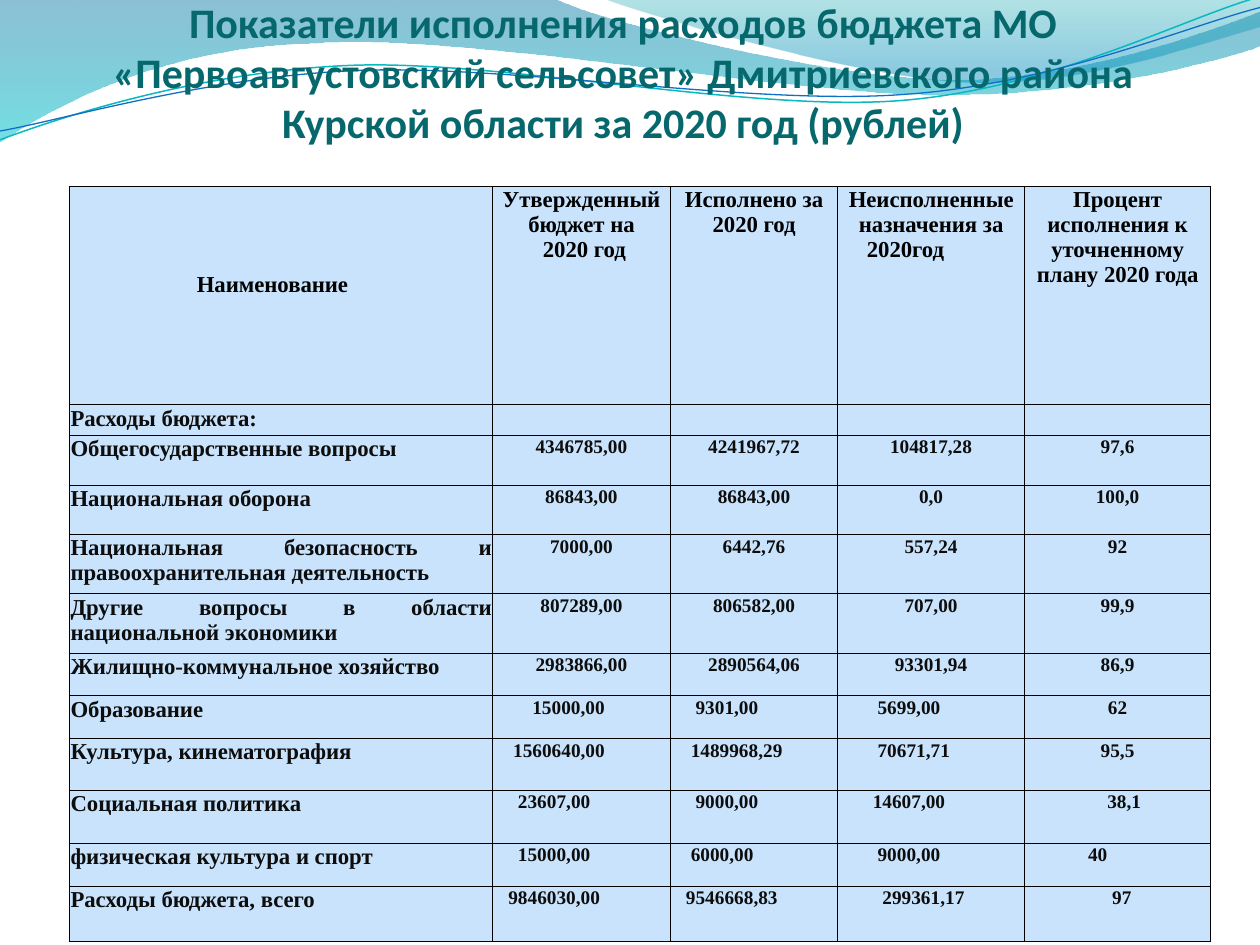
from lxml.etree import SubElement
from pptx import Presentation
from pptx.dml.color import RGBColor
from pptx.enum.text import MSO_ANCHOR as Anchor, MSO_AUTO_SIZE as AutoSize, PP_ALIGN as Align
from pptx.oxml.ns import qn
from pptx.util import Inches, Pt

COLORS = {"title": "06686C", "cell": "C8E3FB", "border": "000000", "head": "000000",
          "body": "0D0D0D", "page": "FFFFFF", "teal_line": "0AB8BF", "blue_line": "0F6FC6",
          "sea": "0074A1", "aqua": "00C6CF", "teal": "00A1A9", "sky": "008BBF"}
HEAD_SPACE, BODY_SPACE = Pt(3.25), Pt(2.75)  # indent units: a quarter of the font size
GRID = 1000  # outline units to the inch

TITLE = ("Показатели исполнения расходов бюджета МО «Первоавгустовский сельсовет» "
         "Дмитриевского района Курской области за 2020 год (рублей)")
COLUMNS = [3.36, 1.41, 1.33, 1.48, 1.48]
HEAD_ROWS = [0.46, 0.21, 0.26, 0.79]
HEADINGS = [["Утвержденный бюджет на", "2020 год"], ["Исполнено за 2020 год"],
            ["Неисполненные назначения за", "2020год"],
            ["Процент исполнения к уточненному плану 2020 года"]]

# Row height, name, four values; a pair is (value, left indent) in a left-aligned cell
EXPENSES = [
    (0.24, "Расходы бюджета:", "", "", "", ""),
    (0.40, "Общегосударственные вопросы", "4346785,00", "4241967,72", "104817,28", "97,6"),
    (0.39, "Национальная оборона", "86843,00", "86843,00", "0,0", "100,0"),
    (0.47, "Национальная безопасность и правоохранительная деятельность",
     "7000,00", "6442,76", "557,24", "92"),
    (0.47, "Другие вопросы в области национальной экономики",
     "807289,00", "806582,00", "707,00", "99,9"),
    (0.34, "Жилищно-коммунальное хозяйство", "2983866,00", "2890564,06", "93301,94", "86,9"),
    (0.34, "Образование", ("15000,00", 8), ("9301,00", 5), ("5699,00", 8), "62"),
    (0.41, "Культура, кинематография",
     ("1560640,00", 4), ("1489968,29", 4), ("70671,71", 8), "95,5"),
    (0.42, "Социальная политика", ("23607,00", 5), ("9000,00", 5), ("14607,00", 7), ("38,1", 17)),
    (0.34, "физическая культура и спорт",
     ("15000,00", 5), ("6000,00", 4), ("9000,00", 8), ("40", 13)),
    (0.44, "Расходы бюджета, всего",
     ("9846030,00", 3), ("9546668,83", 3), ("299361,17", 9), ("97", 18)),
]

# Wave outlines: a point is a line end, a triple of points is a Bezier curve
BANDS = [
    ([(0, 0), (4.4, -0.01), ((4.76, 0.17), (6.64, 0.63), (7.58, 0.63)),
      ((8.53, 0.63), (9.58, 0.26), (10, 0.09)), (10.01, 0.36),
      ((9.83, 0.44), (8.7, 0.76), (7.46, 0.75)), ((6.22, 0.75), (3.82, 0.28), (2.57, 0.34)),
      ((1.29, 0.36), (0.46, 0.83), (-0.01, 1.13))],
     [(0, "sea", 45), (1, "aqua", 55)]),
    ([(4.79, -0.01), ((5.09, 0.11), (6.82, 0.62), (7.69, 0.65)),
      ((8.56, 0.69), (9.61, 0.32), (10, 0.21)), (10, 0)],
     [(0, "teal", 30), (0.8, "sky", 45)]),
]
STRANDS = [
    ([(0, 1.11), ((0.48, 0.93), (1.58, 0.57), (2.77, 0.52)),
      ((3.95, 0.47), (5.93, 0.89), (7.13, 0.8)), ((8.33, 0.71), (9.38, 0.15), (9.98, -0.02))],
     "teal_line", 0.85),
    ([(0, 1.04), ((0.47, 0.96), (1.64, 0.61), (2.83, 0.56)),
      ((4.03, 0.51), (5.97, 0.84), (7.17, 0.75)), ((8.36, 0.67), (9.41, 0.21), (10, 0.06))],
     "blue_line", 0.75),
]


def rgb(name):
    return RGBColor.from_string(COLORS[name])


def draw_wave(slide, outline, closed):
    parts = [part if isinstance(part[0], tuple) else (part,) for part in outline]
    start, *rest = [(round(x * GRID), round(y * GRID)) for part in parts for x, y in part]
    builder = slide.shapes.build_freeform(*start, scale=Inches(1) / GRID)
    builder.add_line_segments(rest, close=closed)
    wave = builder.convert_to_shape()
    wave.shadow.inherit = False

    # Turn each run of three segments that belongs to a curve into one Bezier
    segments = iter(list(wave.element.iter(qn("a:lnTo"))))
    for part in parts[1:]:
        members = [next(segments) for _ in part]
        if len(part) == 3:
            curve = members[0].makeelement(qn("a:cubicBezTo"))
            members[0].addprevious(curve)
            for member in members:
                curve.append(member[0])
                member.getparent().remove(member)
    return wave


def add_waves(slide):
    for outline, stops in BANDS:
        band = draw_wave(slide, outline, True)
        band.line.fill.background()
        band.fill.gradient()
        band.fill.gradient_angle = 270
        for stop, (position, color, _) in zip(band.fill.gradient_stops, stops):
            stop.position = position
            stop.color.rgb = rgb(color)
        tints = list(band.element.spPr.iter(qn("a:srgbClr")))
        for tint, (_, _, opacity) in zip(tints, stops):
            SubElement(tint, qn("a:alpha"), val=str(opacity * 1000))
    for outline, color, width in STRANDS:
        strand = draw_wave(slide, outline, False)
        strand.fill.background()
        strand.line.color.rgb = rgb(color)
        strand.line.width = Pt(width)


def add_title(slide, left, top, width, height):
    title = slide.shapes.title
    title.element.getparent().append(title.element)  # in front of the waves
    title.left, title.top, title.width, title.height = map(Inches, (left, top, width, height))
    frame = title.text_frame
    frame.text = TITLE
    frame.auto_size = AutoSize.NONE
    frame.word_wrap = True
    frame.vertical_anchor = Anchor.BOTTOM
    frame.margin_left = frame.margin_right = frame.margin_bottom = 0
    frame.margin_top = Inches(0.05)
    heading = frame.paragraphs[0]
    heading.alignment = Align.CENTER
    style_font(heading, 24, "title", "Calibri")


def style_font(paragraph, size, color, face="Times New Roman"):
    font = paragraph.font
    font.name, font.size, font.bold = face, Pt(size), True
    font.color.rgb = rgb(color)


def indent_line(cell, side, length):
    last_line = cell.text_frame.paragraphs[-1]
    last_line._p.get_or_add_pPr().set(side, str(length))


def format_cell(cell, lines, size, color, align, edges="LRTB"):
    cell.margin_left = cell.margin_right = cell.margin_top = Inches(0.01)
    cell.margin_bottom = 0
    cell.vertical_anchor = Anchor.TOP
    cell.text = "\n".join(lines)
    for paragraph in cell.text_frame.paragraphs:
        paragraph.alignment = align
        style_font(paragraph, size, color)
    properties = cell._tc.get_or_add_tcPr()
    for side in "LRTB":
        border = SubElement(properties, qn(f"a:ln{side}"), w=str(Pt(0.5)))
        if side in edges:
            paint = SubElement(border, qn("a:solidFill"))
            SubElement(paint, qn("a:srgbClr"), val=COLORS["border"])
        else:
            SubElement(border, qn("a:noFill"))
    cell.fill.solid()
    cell.fill.fore_color.rgb = rgb("cell")


def add_budget_table(slide, left, top):
    heights = HEAD_ROWS + [row[0] for row in EXPENSES]
    frame = slide.shapes.add_table(len(heights), len(COLUMNS), Inches(left), Inches(top),
                                   Inches(sum(COLUMNS)), Inches(sum(heights)))
    table = frame.table
    table.first_row = table.horz_banding = False
    for column, width in zip(table.columns, COLUMNS):
        column.width = Inches(width)
    for row, height in zip(table.rows, heights):
        row.height = Inches(height)

    # Heading: an open first column beside four tall merged cells
    last = len(HEAD_ROWS) - 1
    for r in range(last + 1):
        edges = "LR" + "T" * (r == 0) + "B" * (r == last)
        name = ["Наименование"] if r == 2 else []
        format_cell(table.cell(r, 0), name, 13 if name else 11, "head", Align.CENTER, edges)
    for c, lines in enumerate(HEADINGS, 1):
        table.cell(0, c).merge(table.cell(last, c))
        for r in range(last + 1):
            format_cell(table.cell(r, c), lines if r == 0 else [], 13 if r == 0 else 11,
                        "head", Align.CENTER)
    indent_line(table.cell(2, 0), "marR", 3 * HEAD_SPACE)
    indent_line(table.cell(0, 1), "marL", HEAD_SPACE)
    indent_line(table.cell(0, 3), "marR", 9 * HEAD_SPACE)

    # Expense rows
    for r, (_, name, *values) in enumerate(EXPENSES, last + 1):
        format_cell(table.cell(r, 0), [name], 13, "body", Align.JUSTIFY)
        for c, value in enumerate(values, 1):
            cell = table.cell(r, c)
            if isinstance(value, str):
                format_cell(cell, [value], 11, "body", Align.CENTER)
            else:
                amount, spaces = value
                format_cell(cell, [amount], 11, "body", Align.LEFT)
                indent_line(cell, "marL", spaces * BODY_SPACE)


def main():
    deck = Presentation()
    deck.slide_width, deck.slide_height = Inches(10), Inches(7.5)
    slide = deck.slides.add_slide(deck.slide_layouts[5])
    slide.background.fill.solid()
    slide.background.fill.fore_color.rgb = rgb("page")
    add_waves(slide)
    add_title(slide, 0.47, 0, 8.95, 1.17)
    add_budget_table(slide, 0.55, 1.48)
    deck.save("out.pptx")


if __name__ == "__main__":
    main()
